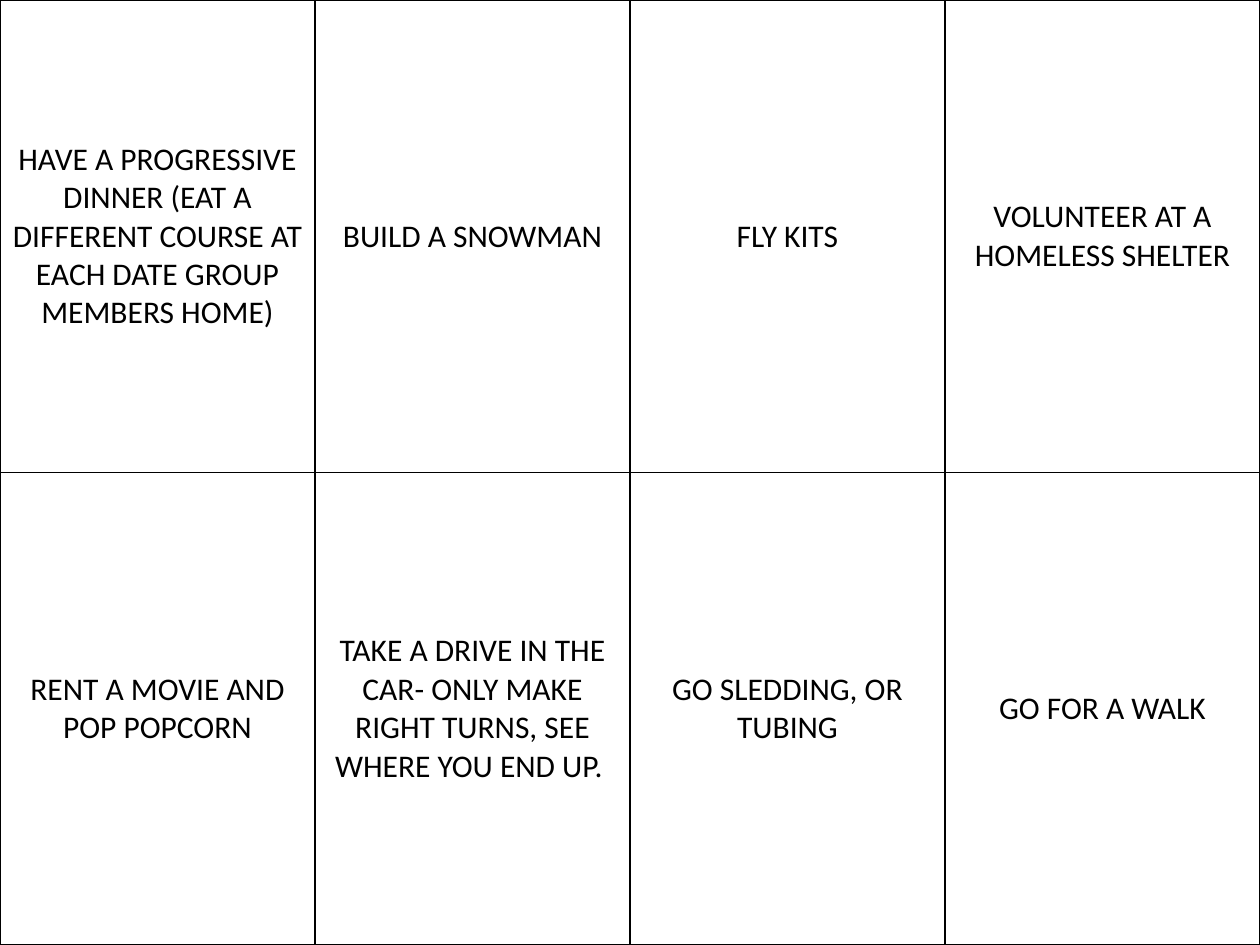
from pptx import Presentation
from pptx.dml.color import RGBColor
from pptx.enum import text
from pptx.oxml import parse_xml
from pptx.oxml.ns import nsdecls
from pptx.util import Pt

WIDTH, HEIGHT = 720, 540
IDEAS = [
    ["HAVE A PROGRESSIVE DINNER (EAT A DIFFERENT COURSE AT EACH DATE GROUP MEMBERS HOME)",
     "BUILD A SNOWMAN", "FLY KITS", "VOLUNTEER AT A HOMELESS SHELTER"],
    ["RENT A MOVIE AND POP POPCORN",
     "TAKE A DRIVE IN THE CAR- ONLY MAKE RIGHT TURNS, SEE WHERE YOU END UP. ",
     "GO SLEDDING, OR TUBING", "GO FOR A WALK"],
]


def rgb(value):
    return RGBColor.from_string(value)


def add_borders(cell, color, width):
    for side in ("lnL", "lnR", "lnT", "lnB"):
        cell._tc.get_or_add_tcPr().append(parse_xml(
            f'<a:{side} {nsdecls("a")} w="{Pt(width)}"><a:solidFill>'
            f'<a:srgbClr val="{color}"/></a:solidFill></a:{side}>'))


prs = Presentation()
prs.slide_width, prs.slide_height = Pt(WIDTH), Pt(HEIGHT)
s = prs.slides.add_slide(prs.slide_layouts[6])

# Table of date idea cards filling the slide
rows, cols = len(IDEAS), len(IDEAS[0])
table = s.shapes.add_table(rows, cols, Pt(0), Pt(0), Pt(WIDTH), Pt(HEIGHT)).table
table.first_row = table.horz_banding = False

# One idea per card
for i, row in enumerate(IDEAS):
    for j, idea in enumerate(row):
        cell = table.cell(i, j)
        add_borders(cell, "000000", 1)
        cell.fill.solid()
        cell.fill.fore_color.rgb = rgb("FFFFFF")
        cell.vertical_anchor = text.MSO_ANCHOR.MIDDLE
        p = cell.text_frame.paragraphs[0]
        p.text = idea
        p.alignment = text.PP_ALIGN.CENTER
        font = p.runs[0].font
        font.name, font.size = "Calibri", Pt(18)
        font.color.rgb = rgb("000000")

prs.save("out.pptx")
